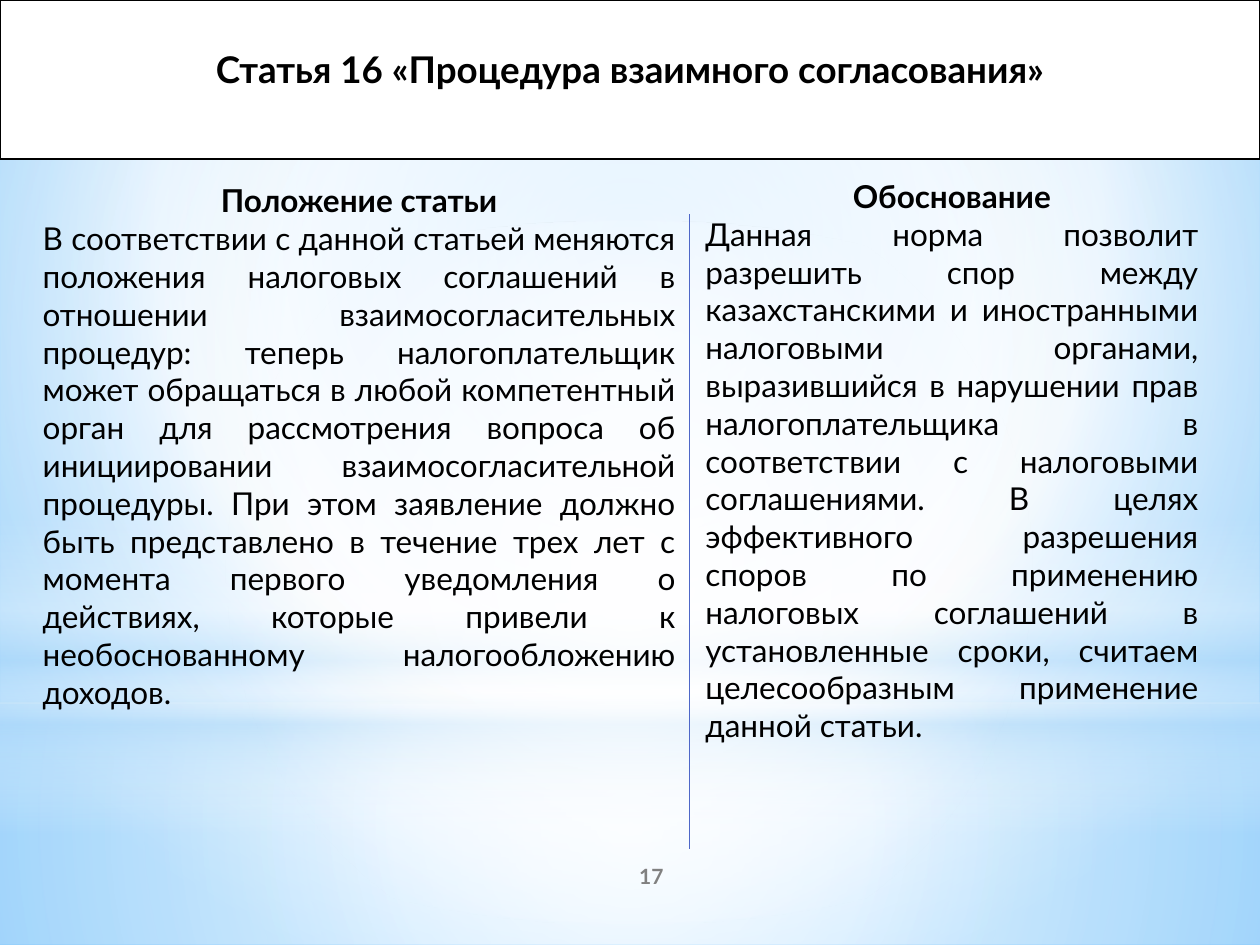
from lxml import etree
from pptx import Presentation, util as u
from pptx.dml.color import RGBColor
from pptx.enum import shapes, text
from pptx.oxml import parse_xml
from pptx.oxml.ns import nsdecls, qn

SHAPE, ALIGN, ANCHOR = shapes.MSO_SHAPE, text.PP_ALIGN, text.MSO_ANCHOR


def rgb(value):
    return RGBColor.from_string(value)


def gradient(stops, center=None, angle=None):
    items = "".join(
        f'<a:gs pos="{pos * 1000}"><a:srgbClr val="{color}">'
        f'<a:alpha val="{alpha * 1000}"/></a:srgbClr></a:gs>'
        for pos, color, alpha in stops)
    if center:
        sides = " ".join(f'{k}="{v * 1000}"' for k, v in zip("ltrb", center))
        way = f'<a:path path="circle"><a:fillToRect {sides}/></a:path>'
    else:
        way = f'<a:lin ang="{angle * 60000}" scaled="0"/>'
    return parse_xml(f'<a:gradFill {nsdecls("a")} rotWithShape="1">'
                     f'<a:gsLst>{items}</a:gsLst>{way}</a:gradFill>')


class Deck:
    """Holds the text style and the current slide, and draws its elements."""

    font = {"name": "Lato", "size": u.Pt(18), "bold": False}
    color = "000000"

    def __init__(self, prs):
        self.s = prs.slides.add_slide(prs.slide_layouts[6])

    def background(self, grad):
        self.s.background.fill.solid()
        old = next(self.s.element.iter(qn("p:bgPr")))[0]
        old.getparent().replace(old, grad)

    def shape(self, kind, box):
        sp = self.s.shapes.add_shape(kind, *map(u.Inches, box))
        sp.shadow.inherit = False
        return sp

    def glow(self, kind, box, grad):
        sp = self.shape(kind, box)
        sp.line.fill.background()
        sp.fill.solid()
        old = sp.element.spPr.find(qn("a:solidFill"))
        old.getparent().replace(old, grad)

    def set_text(self, tf, paragraphs, **frame):
        for key, value in {"word_wrap": True, **frame}.items():
            setattr(tf, key, value)
        for i, (words, align, style) in enumerate(paragraphs):
            p = tf.add_paragraph() if i else tf.paragraphs[0]
            p.alignment = align
            r = p.add_run()
            r.text = words
            style = {**self.font, **style}
            r.font.color.rgb = rgb(style.pop("color", self.color))
            for key, value in style.items():
                setattr(r.font, key, value)

    def title(self, box, words):
        sp = self.shape(SHAPE.RECTANGLE, box)
        sp.fill.solid()
        sp.fill.fore_color.rgb = rgb("FFFFFF")
        sp.line.color.rgb = rgb("000000")
        sp.line.width = u.Pt(1.25)
        self.set_text(sp.text_frame, [(words, ALIGN.CENTER, {"size": u.Pt(21), "bold": True})],
                      vertical_anchor=ANCHOR.TOP, margin_top=u.Inches(0.37))

    def label(self, box, paragraphs):
        sp = self.s.shapes.add_textbox(*map(u.Inches, box))
        self.set_text(sp.text_frame, paragraphs, vertical_anchor=ANCHOR.MIDDLE)

    def column(self, box, heading, body):
        self.label(box, [(heading, ALIGN.CENTER, {"bold": True}), (body, ALIGN.JUSTIFY, {})])

    def line(self, ends, color, width):
        c = self.s.shapes.add_connector(shapes.MSO_CONNECTOR.STRAIGHT, *map(u.Inches, ends))
        c.line.color.rgb = rgb(color)
        c.line.width = u.Pt(width)
        etree.SubElement(c.element.spPr, qn("a:effectLst"))


def main():
    prs = Presentation()
    prs.slide_width, prs.slide_height = u.Inches(10), u.Inches(7.5)
    deck = Deck(prs)
    white, sky, middle = "FFFFFF", "B4DCFA", (50, 50, 50, 50)

    deck.background(gradient([(0, "9ED5FF", 100), (60, white, 100), (100, "5BB9FF", 100)],
                             (20, 10, 20, 60)))
    deck.glow(SHAPE.RECTANGLE, (0, 5.58, 10, 1.92),
              gradient([(0, white, 91), (37, white, 76), (100, sky, 79)], middle))
    deck.glow(SHAPE.RECTANGLE, (0, 0, 10, 5.58),
              gradient([(0, white, 89), (48, white, 62), (100, sky, 79)], middle))
    deck.glow(SHAPE.RECTANGLE, (0, 4.12, 10, 2.5),
              gradient([(0, white, 0), (29, white, 30), (45, sky, 40), (55, white, 26),
                        (65, sky, 60), (100, white, 0)], angle=90))
    deck.glow(SHAPE.OVAL, (0, 1.75, 10, 5.58),
              gradient([(0, white, 100), (56, white, 0)], middle))

    deck.title((0, 0, 10, 1.26), "Статья 16 «Процедура взаимного согласования»")
    deck.column(
        (0.24, 1.02, 5.22, 5.04), "Положение статьи",
        "В соответствии с данной статьей меняются положения налоговых соглашений в "
        "отношении взаимосогласительных процедур: теперь налогоплательщик может "
        "обращаться в любой компетентный орган для рассмотрения вопроса об "
        "инициировании взаимосогласительной процедуры. При этом заявление должно быть "
        "представлено в течение трех лет с момента первого уведомления о действиях, "
        "которые привели к необоснованному налогообложению доходов.")
    deck.column(
        (5.5, 1.04, 4.11, 5.23), "Обоснование",
        "Данная норма позволит разрешить спор между казахстанскими и иностранными "
        "налоговыми органами, выразившийся в нарушении прав налогоплательщика в "
        "соответствии с налоговыми соглашениями. В целях эффективного разрешения "
        "споров по применению налоговых соглашений в установленные сроки, считаем "
        "целесообразным применение данной статьи.")
    deck.line((5.47, 1.7, 5.47, 6.74), "4E67C8", 0.75)
    deck.label((4.17, 6.75, 2, 0.4),
               [("17", ALIGN.CENTER, {"size": u.Pt(12), "bold": True, "color": "808080"})])
    prs.save("out.pptx")


if __name__ == "__main__":
    main()
